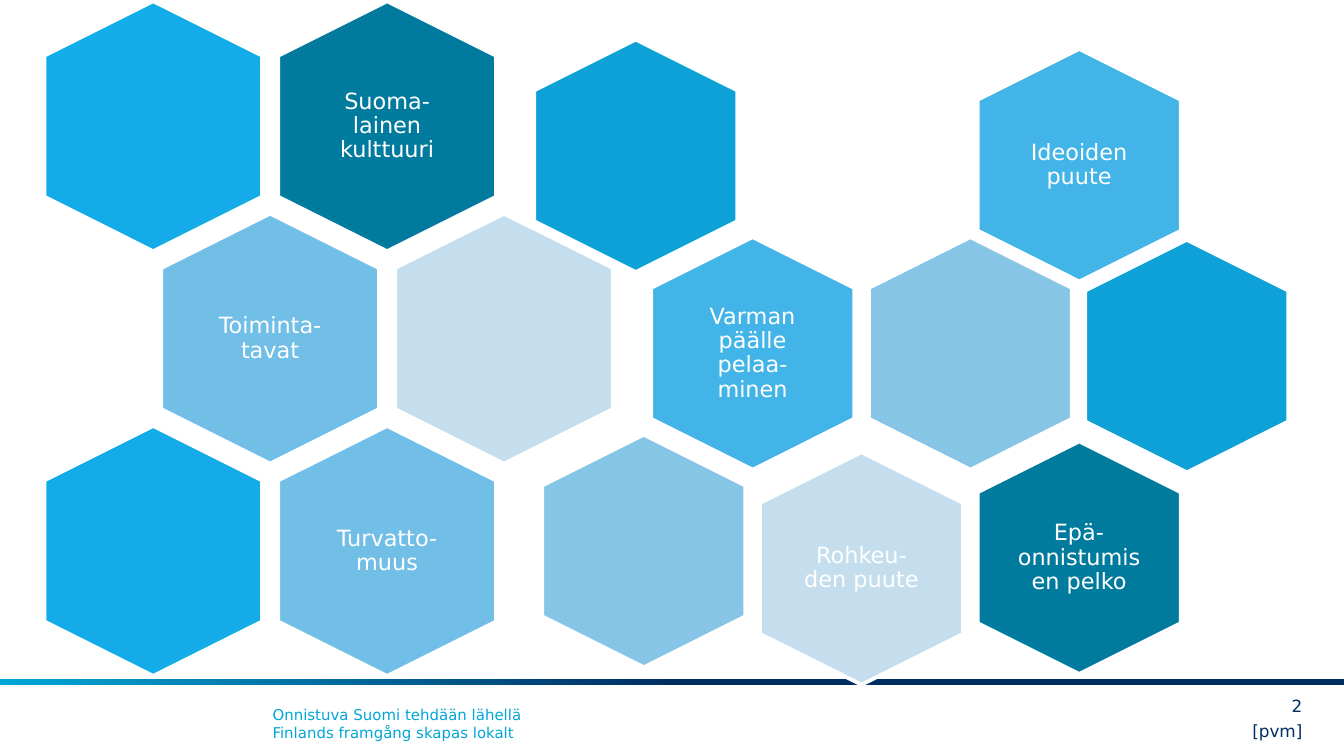
from dataclasses import dataclass

from pptx import Presentation
from pptx.dml.color import RGBColor
from pptx.enum.shapes import MSO_SHAPE
from pptx.enum.text import MSO_ANCHOR, PP_ALIGN
from pptx.util import Inches, Pt


@dataclass(frozen=True)
class Theme:
    font: str = "DejaVu Sans"
    white: str = "FFFFFF"
    navy: str = "002E63"
    cyan: str = "00A6D6"
    teal: str = "007B9E"
    azure: str = "13ACE8"
    ocean: str = "0DA1D7"
    sky: str = "42B4E7"
    soft: str = "71BEE6"
    light: str = "87C5E7"
    pale: str = "C5DEEE"
    label_size: float = 12
    meta_size: float = 9
    footer_size: float = 8
    outline: float = 2


@dataclass(frozen=True)
class Honeycomb:
    """Grid of cell centres; each cell is (column, row, colour, label, nudge)."""
    origin: tuple
    step: tuple
    cell: tuple
    label: tuple
    cells: list


THEME = Theme()
SLIDE_WIDTH = 10
SLIDE_HEIGHT = SLIDE_WIDTH * 9 / 16
FOOTER = ["Onnistuva Suomi tehdään lähellä", "Finlands framgång skapas lokalt"]

HONEYCOMBS = [
    Honeycomb(
        origin=(1.14, 0.94), step=(0.87, 1.58), cell=(1.86, 1.62), label=(1.12, 1.28),
        cells=[
            (2, 0, THEME.teal, "Suoma-lainen kulttuuri", (0, 0)),
            (0, 0, THEME.azure, "", (0, 0)),
            (1, 1, THEME.soft, "Toiminta-tavat", (0, 0)),
            (3, 1, THEME.pale, "", (0, 0)),
            (2, 2, THEME.soft, "Turvatto-muus", (0, 0)),
            (0, 2, THEME.azure, "", (0, 0)),
        ]),
    Honeycomb(
        origin=(4.79, 1.16), step=(0.81, 1.47), cell=(1.73, 1.51), label=(1.04, 1.19),
        cells=[
            (4, 2, THEME.teal, "Epä-onnistumisen pelko", (0, 0.05)),
            (5, 1, THEME.ocean, "", (-0.01, 0.02)),
            (1, 1, THEME.sky, "Varman päälle pelaa-minen", (0, 0)),
            (3, 1, THEME.light, "", (0, 0)),
            (2, 2, THEME.pale, "Rohkeu-den puute", (0, 0.13)),
            (0, 2, THEME.light, "", (0, 0)),
            (4, 0, THEME.sky, "Ideoiden puute", (0, 0.07)),
            (0, 0, THEME.ocean, "", (-0.06, 0)),
        ]),
]


def rgb(colour):
    return RGBColor.from_string(colour)


def centred(center, size):
    """Return left, top, width and height of a box around a centre."""
    corner = [middle - length / 2 for middle, length in zip(center, size)]
    return [Inches(value) for value in (*corner, *size)]


def add_text(shapes, frame, lines, size, colour, align, inset=None,
             anchor=MSO_ANCHOR.TOP, line_spacing=None):
    box = shapes.add_textbox(*frame)
    text = box.text_frame
    text.word_wrap = True
    text.vertical_anchor = anchor
    if inset is not None:
        text.margin_left = text.margin_right = Inches(inset)
        text.margin_top = text.margin_bottom = Inches(inset)
    para = text.paragraphs[0]
    para.alignment = align
    para.line_spacing = line_spacing
    for index, line in enumerate(lines):
        if index:
            para.add_line_break()
        span = para.add_run()
        span.text = line
        span.font.name = THEME.font
        span.font.size = Pt(size)
        span.font.color.rgb = rgb(colour)


def add_honeycomb(slide, comb):
    shapes = slide.shapes.add_group_shape().shapes
    for column, row, colour, label, nudge in comb.cells:
        center = [start + index * step + shift for start, index, step, shift
                  in zip(comb.origin, (column, row), comb.step, nudge)]
        hexagon = shapes.add_shape(MSO_SHAPE.HEXAGON, *centred(center, comb.cell))
        hexagon.rotation = 90
        hexagon.shadow.inherit = False
        hexagon.fill.solid()
        hexagon.fill.fore_color.rgb = rgb(colour)
        hexagon.line.color.rgb = rgb(THEME.white)
        hexagon.line.width = Pt(THEME.outline)
        if label:
            add_text(shapes, centred(center, comb.label), [label], THEME.label_size,
                     THEME.white, PP_ALIGN.CENTER, 0.05, MSO_ANCHOR.MIDDLE, 0.9)


def add_footer(slide):
    band = slide.shapes.add_shape(MSO_SHAPE.RECTANGLE, 0, Inches(5.05),
                                  Inches(SLIDE_WIDTH), Inches(0.05))
    band.shadow.inherit = False
    band.line.fill.background()
    band.fill.gradient()
    band.fill.gradient_angle = 180
    stops = [(0.5, THEME.navy), (1, THEME.cyan)]
    for stop, (position, colour) in zip(band.fill.gradient_stops, stops):
        stop.position = position
        stop.color.rgb = rgb(colour)

    frame = [Inches(value) for value in (1.93, 5.2, 6.54, 0.37)]
    add_text(slide.shapes, frame, FOOTER, THEME.footer_size, THEME.cyan, PP_ALIGN.LEFT)
    right = 9.69
    for label, top, width in [("[pvm]", 5.33, 0.99), ("2", 5.14, 0.43)]:
        frame = [Inches(value) for value in (right - width, top, width, 0.22)]
        add_text(slide.shapes, frame, [label], THEME.meta_size, THEME.navy,
                 PP_ALIGN.RIGHT, 0, MSO_ANCHOR.MIDDLE)


def main():
    deck = Presentation()
    deck.slide_width, deck.slide_height = Inches(SLIDE_WIDTH), Inches(SLIDE_HEIGHT)
    page = deck.slides.add_slide(deck.slide_layouts.get_by_name("Blank"))
    add_footer(page)
    for comb in HONEYCOMBS:
        add_honeycomb(page, comb)
    deck.save("out.pptx")


if __name__ == "__main__":
    main()
